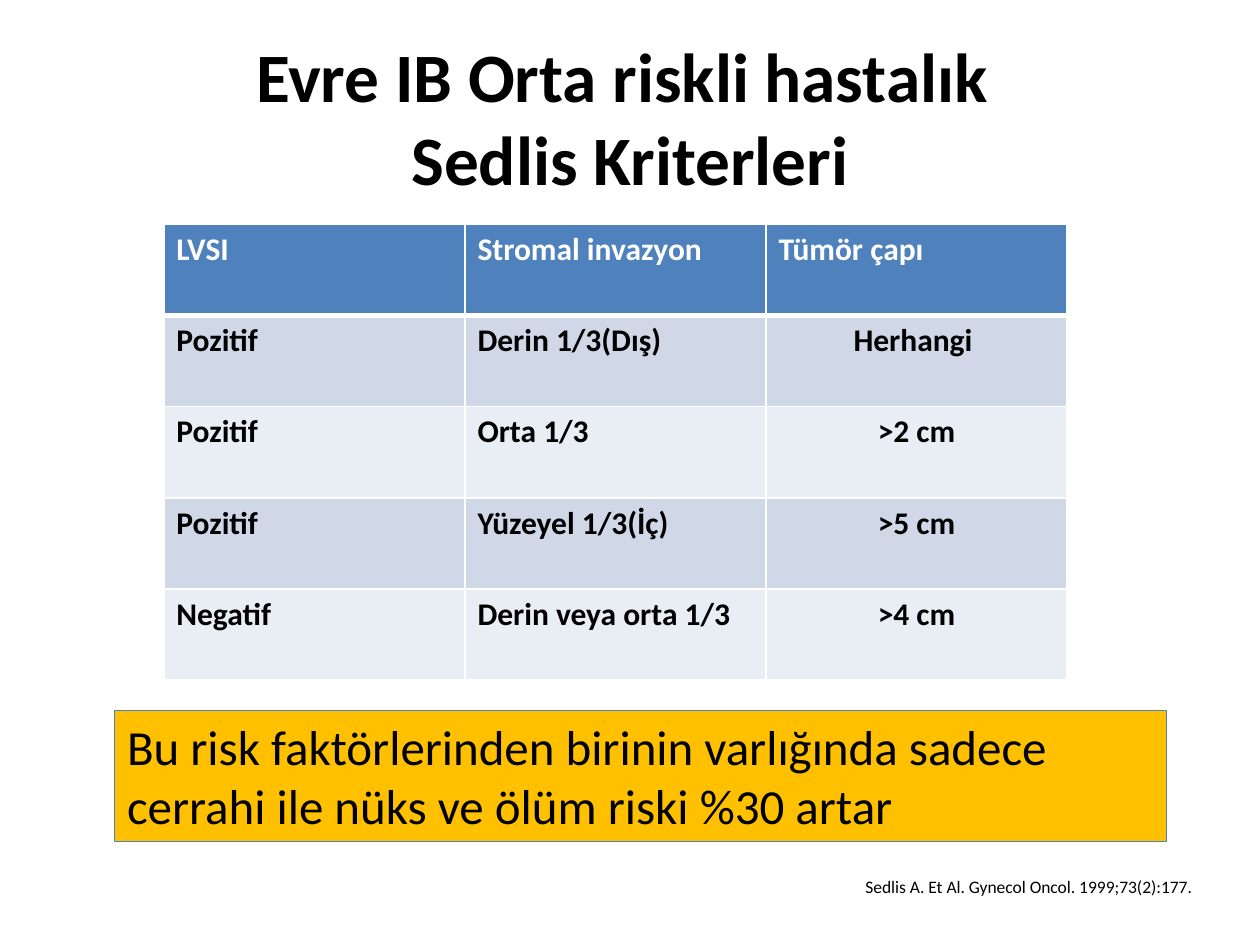
from lxml import etree
from pptx import Presentation
from pptx.dml.color import RGBColor
from pptx.enum.shapes import MSO_SHAPE
from pptx.enum.text import MSO_ANCHOR, MSO_AUTO_SIZE, PP_ALIGN
from pptx.oxml.ns import qn
from pptx.util import Inches, Pt

RECT = MSO_SHAPE.RECTANGLE
MIDDLE = MSO_ANCHOR.MIDDLE
TOP = MSO_ANCHOR.TOP
GROW = MSO_AUTO_SIZE.SHAPE_TO_FIT_TEXT
FIXED = MSO_AUTO_SIZE.NONE
LEFT, CENTER, RIGHT = PP_ALIGN.LEFT, PP_ALIGN.CENTER, PP_ALIGN.RIGHT

BLACK = RGBColor(0x00, 0x00, 0x00)
WHITE = RGBColor(0xFF, 0xFF, 0xFF)
BLUE = RGBColor(0x4F, 0x81, 0xBD)
DARK = RGBColor(0xD0, 0xD8, 0xE8)
PALE = RGBColor(0xE9, 0xED, 0xF4)
GOLD = RGBColor(0xFF, 0xC0, 0x00)
FONT = "Calibri"

ROWS = [
    ("LVSI", "Stromal invazyon", "Tümör çapı"),
    ("Pozitif", "Derin 1/3(Dış)", "Herhangi "),
    ("Pozitif", "Orta 1/3", ">2 cm"),
    ("Pozitif", "Yüzeyel 1/3(İç)", ">5 cm"),
    ("Negatif", "Derin veya orta 1/3", ">4 cm"),
]


def add_run(para, text, size, color=BLACK, bold=False):
    run = para.add_run()
    run.text = text
    font = run.font
    font.name = FONT
    font.size = Pt(size)
    font.bold = bold
    font.color.rgb = color


def add_title(slide, lines):
    title = slide.shapes.title
    title.left, title.top = Inches(0.5), Inches(0.3)
    title.width, title.height = Inches(9), Inches(1.25)
    frame = title.text_frame
    frame.auto_size = FIXED
    frame.vertical_anchor = MIDDLE
    para = frame.paragraphs[0]
    para.alignment = CENTER
    for index, line in enumerate(lines):
        if index:
            para.add_line_break()
        add_run(para, line, 39.6, bold=True)


def add_edge(cell, side, width):
    props = cell._tc.get_or_add_tcPr()
    edge = etree.SubElement(props, qn("a:ln" + side), w=str(Pt(width)))
    fill = etree.SubElement(edge, qn("a:solidFill"))
    etree.SubElement(fill, qn("a:srgbClr"), val=str(WHITE))


def fill_cell(cell, text, row, col):
    head = row == 0
    for side in "LRTB":
        thick = head and side == "B" or row == 1 and side == "T"
        add_edge(cell, side, 3 if thick else 1)
    cell.fill.solid()
    cell.fill.fore_color.rgb = BLUE if head else DARK if row % 2 else PALE
    para = cell.text_frame.paragraphs[0]
    para.alignment = CENTER if col == 2 and not head else LEFT
    add_run(para, text, 18, WHITE if head else BLACK, True)


def add_grid(slide):
    frame = slide.shapes.add_table(
        len(ROWS), len(ROWS[0]),
        Inches(1.3), Inches(1.78), Inches(7.17), Inches(3.62))
    table = frame.table
    for row, texts in enumerate(ROWS):
        for col, text in enumerate(texts):
            fill_cell(table.cell(row, col), text, row, col)


def add_box(slide, text):
    box = slide.shapes.add_shape(
        RECT, Inches(0.91), Inches(5.64), Inches(8.35), Inches(1.04))
    box.shadow.inherit = False
    box.fill.solid()
    box.fill.fore_color.rgb = GOLD
    box.line.color.rgb = BLUE
    box.line.width = Pt(0.75)
    frame = box.text_frame
    frame.word_wrap = True
    frame.auto_size = GROW
    frame.vertical_anchor = TOP
    para = frame.paragraphs[0]
    para.alignment = LEFT
    add_run(para, text, 28)


def add_source(slide, text):
    box = slide.shapes.add_textbox(
        Inches(6.73), Inches(6.9), Inches(2.86), Inches(0.27))
    frame = box.text_frame
    frame.word_wrap = False
    frame.auto_size = GROW
    para = frame.paragraphs[0]
    para.alignment = RIGHT
    add_run(para, text, 10)


def main():
    deck = Presentation()
    deck.slide_width, deck.slide_height = Inches(10), Inches(7.5)
    slide = deck.slides.add_slide(deck.slide_layouts[5])
    add_title(slide, ["Evre IB Orta riskli hastalık ", "Sedlis Kriterleri"])
    add_grid(slide)
    add_box(slide, "Bu risk faktörlerinden birinin varlığında sadece "
                   "cerrahi ile nüks ve ölüm riski %30 artar")
    add_source(slide, "Sedlis A. Et Al. Gynecol Oncol. 1999;73(2):177. ")
    deck.save("out.pptx")


if __name__ == "__main__":
    main()
